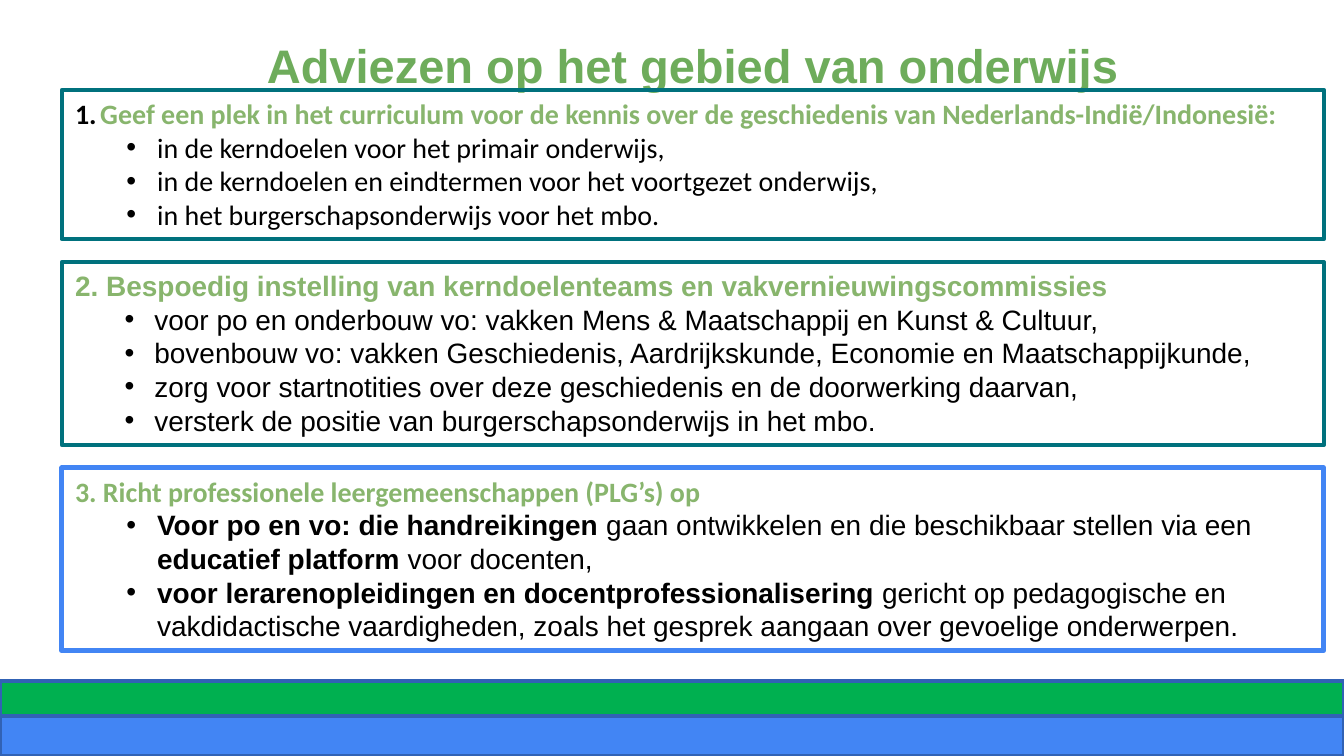
from typing import NamedTuple

from lxml import etree
from pptx import Presentation
from pptx.dml.color import RGBColor
from pptx.enum.shapes import MSO_SHAPE
from pptx.enum.text import MSO_ANCHOR, PP_ALIGN
from pptx.oxml.ns import qn
from pptx.util import Pt

RECTANGLE = MSO_SHAPE.RECTANGLE
TOP = MSO_ANCHOR.TOP
LEFT, CENTER = PP_ALIGN.LEFT, PP_ALIGN.CENTER

BLACK = RGBColor(0x00, 0x00, 0x00)
TITLE_GREEN = RGBColor(0x6E, 0xAC, 0x5B)
HEADING_GREEN = RGBColor(0x88, 0xB5, 0x6D)
TEAL = RGBColor(0x00, 0x71, 0x7D)
BLUE = RGBColor(0x42, 0x85, 0xF4)
DARK_BLUE = RGBColor(0x31, 0x62, 0xB5)
BAR_GREEN = RGBColor(0x00, 0xB0, 0x50)

SLIDE_WIDTH, SLIDE_HEIGHT = 720, 405
CONTENT_LEFT, CONTENT_WIDTH = 33.1, 676.1
FIRST_PANEL_TOP, PANEL_GAP = 48.2, 12.2
TEXT_SIZE, LINE_SPACING = 15, 18


class Span(NamedTuple):
    text: str
    bold: bool = False


class Panel(NamedTuple):
    heading: str
    heading_font: str
    numbered: bool
    items: list[list[Span]]
    item_font: str
    item_level: int
    margin: float
    hanging: float
    height: float
    border: RGBColor
    border_width: float


class Bar(NamedTuple):
    top: float
    height: float
    color: RGBColor


PANELS = [
    Panel(
        "Geef een plek in het curriculum voor de kennis over de geschiedenis "
        "van Nederlands-Indië/Indonesië:",
        "Calibri", True,
        [
            [Span("in de kerndoelen voor het primair onderwijs,")],
            [Span("in de kerndoelen en eindtermen voor het voortgezet onderwijs,")],
            [Span("in het burgerschapsonderwijs voor het mbo.")],
        ],
        "Calibri", 1, 44, 16.5, 80, TEAL, 2.25,
    ),
    Panel(
        "2. Bespoedig instelling van kerndoelenteams en vakvernieuwingscommissies",
        "Arial", False,
        [
            [Span("voor po en onderbouw vo: vakken Mens & Maatschappij en Kunst & Cultuur,")],
            [Span("bovenbouw vo: vakken Geschiedenis, Aardrijkskunde, Economie en "
                  "Maatschappijkunde,")],
            [Span("zorg voor startnotities over deze geschiedenis en de doorwerking daarvan,")],
            [Span("versterk de positie van burgerschapsonderwijs in het mbo.")],
        ],
        "Arial", 0, 42.5, 16, 98, TEAL, 2.25,
    ),
    Panel(
        "3. Richt professionele leergemeenschappen (PLG’s) op",
        "Calibri", False,
        [
            [
                Span("Voor po en vo: die handreikingen ", True),
                Span("gaan ontwikkelen en die beschikbaar stellen via een "),
                Span("educatief platform ", True),
                Span("voor docenten,"),
            ],
            [
                Span("voor lerarenopleidingen en docentprofessionalisering", True),
                Span(" gericht op pedagogische en vakdidactische vaardigheden, "
                     "zoals het gesprek aangaan over gevoelige onderwerpen."),
            ],
        ],
        "Arial", 1, 44, 16.5, 98, BLUE, 2.5,
    ),
]

BARS = [Bar(383.6, 21.4, BLUE), Bar(365, 18.6, BAR_GREEN)]


def add_run(paragraph, span: Span, font: str, size: float, color: RGBColor) -> None:
    run = paragraph.add_run()
    run.text = span.text
    run.font.name = font
    run.font.size = Pt(size)
    run.font.bold = span.bold
    run.font.color.rgb = color


def set_bullet(paragraph, margin: float, hanging: float, font: str,
               tag: str, **attributes: str) -> None:
    """Give a paragraph a black bullet or number with a hanging indent."""
    properties = paragraph._p.get_or_add_pPr()
    properties.set("marL", str(Pt(margin)))
    properties.set("indent", str(-Pt(hanging)))
    bullet_color = etree.SubElement(properties, qn("a:buClr"))
    etree.SubElement(bullet_color, qn("a:srgbClr"), val=str(BLACK))
    etree.SubElement(properties, qn("a:buFont"), typeface=font)
    etree.SubElement(properties, qn(tag), **attributes)


def add_rectangle(slide, left: float, top: float, width: float, height: float,
                  border: RGBColor, border_width: float):
    shape = slide.shapes.add_shape(RECTANGLE, Pt(left), Pt(top), Pt(width), Pt(height))
    shape.shadow.inherit = False
    shape.line.color.rgb = border
    shape.line.width = Pt(border_width)
    return shape


def add_title(slide, text: str) -> None:
    box = slide.shapes.add_textbox(Pt(CONTENT_LEFT), Pt(9.4), Pt(CONTENT_WIDTH), Pt(33.8))
    frame = box.text_frame
    frame.word_wrap = True
    frame.vertical_anchor = TOP
    frame.margin_top = Pt(10)
    paragraph = frame.paragraphs[0]
    paragraph.alignment = CENTER
    add_run(paragraph, Span(text, True), "Arial", 25.2, TITLE_GREEN)


def add_panel(slide, panel: Panel, top: float) -> None:
    shape = add_rectangle(slide, CONTENT_LEFT, top, CONTENT_WIDTH, panel.height,
                          panel.border, panel.border_width)
    shape.fill.background()
    frame = shape.text_frame
    frame.word_wrap = True
    frame.vertical_anchor = TOP

    # Heading
    heading = frame.paragraphs[0]
    heading.alignment = LEFT
    heading.line_spacing = Pt(LINE_SPACING)
    if panel.numbered:
        set_bullet(heading, 13.5, 13.5, panel.heading_font,
                   "a:buAutoNum", type="arabicPeriod")
    add_run(heading, Span(panel.heading, True), panel.heading_font, TEXT_SIZE, HEADING_GREEN)

    # Bulleted items
    for spans in panel.items:
        item = frame.add_paragraph()
        item.alignment = LEFT
        item.level = panel.item_level
        item.line_spacing = Pt(LINE_SPACING)
        set_bullet(item, panel.margin, panel.hanging, "Arial", "a:buChar", char="•")
        for span in spans:
            add_run(item, span, panel.item_font, TEXT_SIZE, BLACK)


def add_bar(slide, bar: Bar) -> None:
    shape = add_rectangle(slide, 0, bar.top, SLIDE_WIDTH, bar.height, DARK_BLUE, 2)
    shape.fill.solid()
    shape.fill.fore_color.rgb = bar.color


def main() -> None:
    presentation = Presentation()
    presentation.slide_width = Pt(SLIDE_WIDTH)
    presentation.slide_height = Pt(SLIDE_HEIGHT)
    slide = presentation.slides.add_slide(presentation.slide_layouts[6])

    add_title(slide, "Adviezen op het gebied van onderwijs")

    # Panels stacked with equal gaps
    top = FIRST_PANEL_TOP
    for panel in PANELS:
        add_panel(slide, panel, top)
        top += panel.height + PANEL_GAP

    # Footer bars
    for bar in BARS:
        add_bar(slide, bar)

    presentation.save("out.pptx")


if __name__ == "__main__":
    main()
